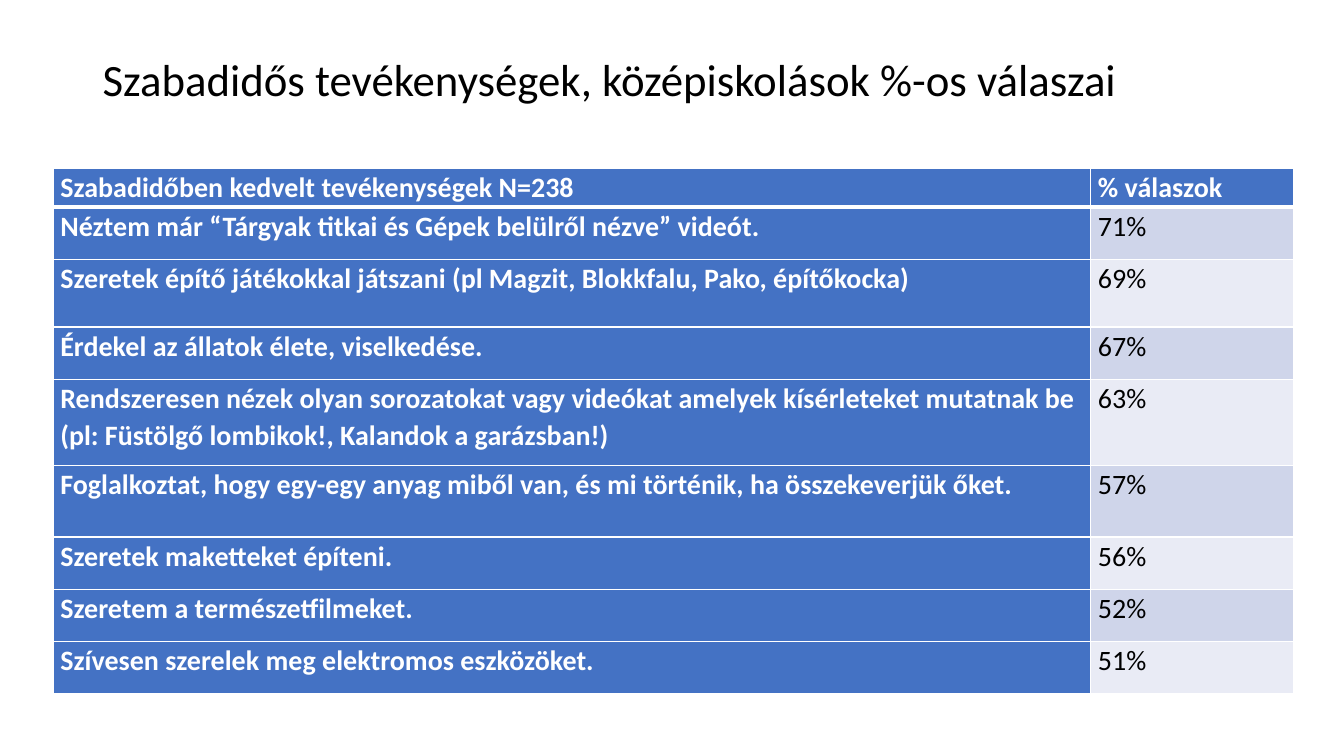
from lxml import etree
from pptx import Presentation
from pptx import util as u
from pptx.dml.color import RGBColor
from pptx.enum import text
from pptx.oxml import ns

COLORS = {"ink": "000000", "paper": "FFFFFF", "blue": "4472C4",
          "band_dark": "CFD5EA", "band_light": "E9EBF5"}
FONT = "Calibri"
TITLE = "Szabadidős tevékenységek, középiskolások %-os válaszai"
HEADER = ("Szabadidőben kedvelt tevékenységek N=238", "% válaszok")

# Activity, share of answers, row height in cm
ANSWERS = [
    ("Néztem már “Tárgyak titkai és Gépek belülről nézve” videót.", "71%", 1.32),
    ("Szeretek építő játékokkal játszani (pl Magzit, Blokkfalu, Pako, építőkocka)", "69%", 1.7),
    ("Érdekel az állatok élete, viselkedése.", "67%", 1.32),
    ("Rendszeresen nézek olyan sorozatokat vagy videókat amelyek kísérleteket "
     "mutatnak be (pl: Füstölgő lombikok!, Kalandok a garázsban!)", "63%", 2.18),
    ("Foglalkoztat, hogy egy-egy anyag miből van, és mi történik, ha összekeverjük őket.",
     "57%", 1.79),
    ("Szeretek maketteket építeni.", "56%", 1.32),
    ("Szeretem a természetfilmeket.", "52%", 1.32),
    ("Szívesen szerelek meg elektromos eszközöket.", "51%", 1.32),
]
HEADER_HEIGHT = 0.97
SHARE_WIDTH = 5.1


def format_span(para, size, color, bold=False):
    font = para.runs[0].font
    font.name, font.size, font.bold = FONT, u.Pt(size), bold
    font.color.rgb = RGBColor.from_string(COLORS[color])


def set_borders(cell, top=1, bottom=1):
    """White cell borders; widths in points."""
    properties = cell._tc.get_or_add_tcPr()
    sides = (("lnL", 1), ("lnR", 1), ("lnT", top), ("lnB", bottom))
    for position, (side, width) in enumerate(sides):
        line = etree.Element(ns.qn(f"a:{side}"), w=str(u.Pt(width)))
        fill = etree.SubElement(line, ns.qn("a:solidFill"))
        etree.SubElement(fill, ns.qn("a:srgbClr"), val=COLORS["paper"])
        properties.insert(position, line)


def fill_cell(cell, words, fill, color, bold, justified):
    cell.margin_left = cell.margin_right = u.Cm(0.18)
    cell.margin_top = cell.margin_bottom = 0
    cell.fill.solid()
    cell.fill.fore_color.rgb = RGBColor.from_string(COLORS[fill])
    cell.text_frame.text = words
    para = cell.text_frame.paragraphs[0]
    para.line_spacing = 1.07
    para.alignment = text.PP_ALIGN.JUSTIFY if justified else text.PP_ALIGN.LEFT
    if not justified:
        para.space_before = u.Pt(6)
    format_span(para, 20, color, bold)


def place_title(page, left, top, width, height):
    box = page.shapes.title
    box.left, box.top, box.width, box.height = map(u.Cm, (left, top, width, height))
    frame = box.text_frame
    frame.text = TITLE
    frame.word_wrap = True
    frame.auto_size = text.MSO_AUTO_SIZE.NONE
    frame.vertical_anchor = text.MSO_ANCHOR.MIDDLE
    para = frame.paragraphs[0]
    para.alignment = text.PP_ALIGN.LEFT
    para.line_spacing = 0.9
    format_span(para, 32, "ink")


def place_answers(page, left, top, width):
    heights = [HEADER_HEIGHT] + [height for _, _, height in ANSWERS]
    table = page.shapes.add_table(len(heights), 2, u.Cm(left), u.Cm(top),
                                  u.Cm(width), u.Cm(sum(heights))).table
    table.columns[0].width = u.Cm(width - SHARE_WIDTH)
    table.columns[1].width = u.Cm(SHARE_WIDTH)
    rows = [HEADER] + [(activity, share) for activity, share, _ in ANSWERS]
    for index, (activity, share) in enumerate(rows):
        table.rows[index].height = u.Cm(heights[index])
        is_header = index == 0
        band = "band_dark" if index % 2 else "band_light"
        activity_cell, share_cell = table.cell(index, 0), table.cell(index, 1)
        fill_cell(activity_cell, activity, "blue", "paper", True, False)
        fill_cell(share_cell, share, "blue" if is_header else band,
                  "paper" if is_header else "ink", is_header, True)
        for cell in (activity_cell, share_cell):
            set_borders(cell, top=3 if index == 1 else 1, bottom=3 if is_header else 1)


def main():
    deck = Presentation()
    deck.slide_width, deck.slide_height = u.Cm(33.87), u.Cm(19.05)
    page = deck.slides.add_slide(deck.slide_layouts[5])
    place_title(page, 2.33, 1.01, 29.21, 2.13)
    place_answers(page, 1.34, 4.25, 31.25)
    deck.save("out.pptx")


if __name__ == "__main__":
    main()
